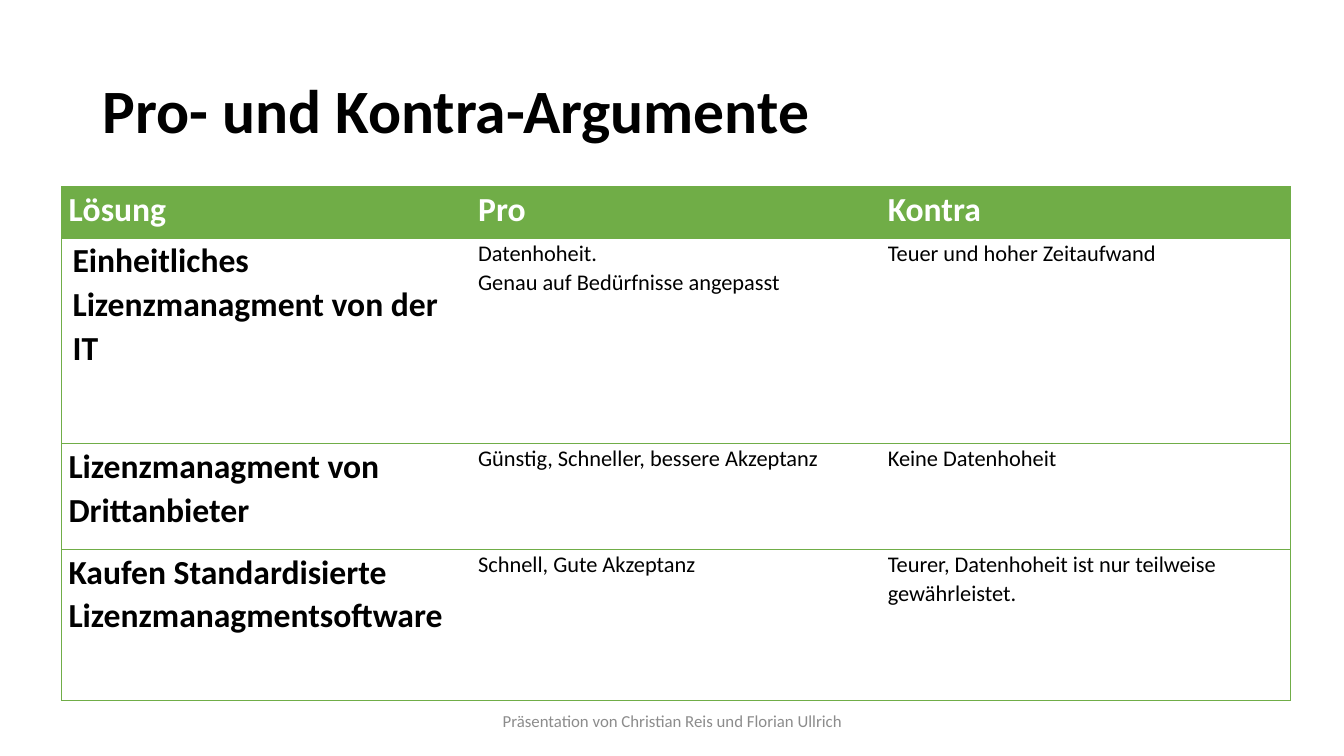
from lxml import etree
from pptx import Presentation
from pptx.dml.color import RGBColor
from pptx.enum.text import MSO_ANCHOR, MSO_AUTO_SIZE, PP_ALIGN
from pptx.oxml.ns import qn
from pptx.util import Inches, Pt

LEFT, CENTER = PP_ALIGN.LEFT, PP_ALIGN.CENTER
MIDDLE = MSO_ANCHOR.MIDDLE
GREEN = RGBColor(0x70, 0xAD, 0x47)
GREY = RGBColor(0x8C, 0x8C, 0x8C)
BLACK = RGBColor(0, 0, 0)
WHITE = RGBColor(0xFF, 0xFF, 0xFF)
FONT = "Calibri"
TITLE_ONLY = 5
PLAIN_TABLE_STYLE = "{2D5ABB26-0587-4C30-8999-92F81FD0307C}"

TITLE_BOX = (0.92, 0.4, 11.5, 1.45)
TABLE_BOX = (0.61, 1.85, 12.19, 5.1)
FOOTER_BOX = (4.42, 6.95, 4.5, 0.4)
ROW_HEIGHTS = (0.51, 2.04, 1.05, 1.5)
FIRST_SOLUTION_INDENT = 0.04

ARGUMENTS = (
    ("Lösung", "Pro", "Kontra"),
    ("Einheitliches Lizenzmanagment von der IT",
     "Datenhoheit.\nGenau auf Bedürfnisse angepasst",
     "Teuer und hoher Zeitaufwand"),
    ("Lizenzmanagment von Drittanbieter",
     "Günstig, Schneller, bessere Akzeptanz",
     "Keine Datenhoheit"),
    ("Kaufen Standardisierte Lizenzmanagmentsoftware",
     "Schnell, Gute Akzeptanz",
     "Teurer, Datenhoheit ist nur teilweise gewährleistet."),
)


def write_text(frame, text, size, color, bold=False, spacing=1.0, align=LEFT):
    frame.text = text
    frame.word_wrap = True
    for para in frame.paragraphs:
        para.alignment = align
        para.line_spacing = spacing
        font = para.runs[0].font
        font.color.rgb = color
        values = {"name": FONT, "size": Pt(size), "bold": bold}
        for name, value in values.items():
            setattr(font, name, value)


def add_title(page, box):
    title = page.shapes.title
    for name, value in zip(("left", "top", "width", "height"), box):
        setattr(title, name, Inches(value))
    frame = title.text_frame
    write_text(frame, "Pro- und Kontra-Argumente", 44, BLACK, True, 0.9)
    frame.auto_size = MSO_AUTO_SIZE.NONE
    frame.vertical_anchor = MIDDLE


def add_border(cell, sides):
    properties = cell._tc.get_or_add_tcPr()
    for side in sides:
        line = etree.SubElement(properties, qn(f"a:ln{side}"), w=str(Pt(0.5)))
        fill = etree.SubElement(line, qn("a:solidFill"))
        etree.SubElement(fill, qn("a:srgbClr"), val=str(GREEN))


def add_argument_table(page, box):
    row_count, column_count = len(ARGUMENTS), len(ARGUMENTS[0])
    table = page.shapes.add_table(row_count, column_count, *map(Inches, box)).table
    table.horz_banding = False
    table._tbl.tblPr.find(qn("a:tableStyleId")).text = PLAIN_TABLE_STYLE
    for row, height in zip(table.rows, ROW_HEIGHTS):
        row.height = Inches(height)

    margins = {"margin_left": Inches(0.07), "margin_right": Inches(0.07),
               "margin_top": 0, "margin_bottom": 0}
    for r, texts in enumerate(ARGUMENTS):
        for c, text in enumerate(texts):
            cell = table.cell(r, c)
            for name, value in margins.items():
                setattr(cell, name, value)
            header = r == 0
            strong = header or c == 0
            write_text(cell.text_frame, text, 24 if strong else 16,
                       WHITE if header else BLACK, strong, 1.07)
            left = "L" if c == 0 else ""
            right = "R" if c == column_count - 1 else ""
            add_border(cell, left + right + "TB")
            if header:
                cell.fill.solid()
                cell.fill.fore_color.rgb = GREEN
            else:
                cell.fill.background()

    first_solution = table.cell(1, 0).text_frame.paragraphs[0]
    first_solution._p.get_or_add_pPr().set("marL", str(Inches(FIRST_SOLUTION_INDENT)))


def add_footer(page, box):
    frame = page.shapes.add_textbox(*map(Inches, box)).text_frame
    write_text(frame, "Präsentation von Christian Reis und Florian Ullrich",
               12, GREY, align=CENTER)
    frame.vertical_anchor = MIDDLE


def main():
    deck = Presentation()
    deck.slide_width, deck.slide_height = Inches(13.33), Inches(7.5)
    page = deck.slides.add_slide(deck.slide_layouts[TITLE_ONLY])
    add_title(page, TITLE_BOX)
    add_argument_table(page, TABLE_BOX)
    add_footer(page, FOOTER_BOX)
    deck.save("out.pptx")


if __name__ == "__main__":
    main()
